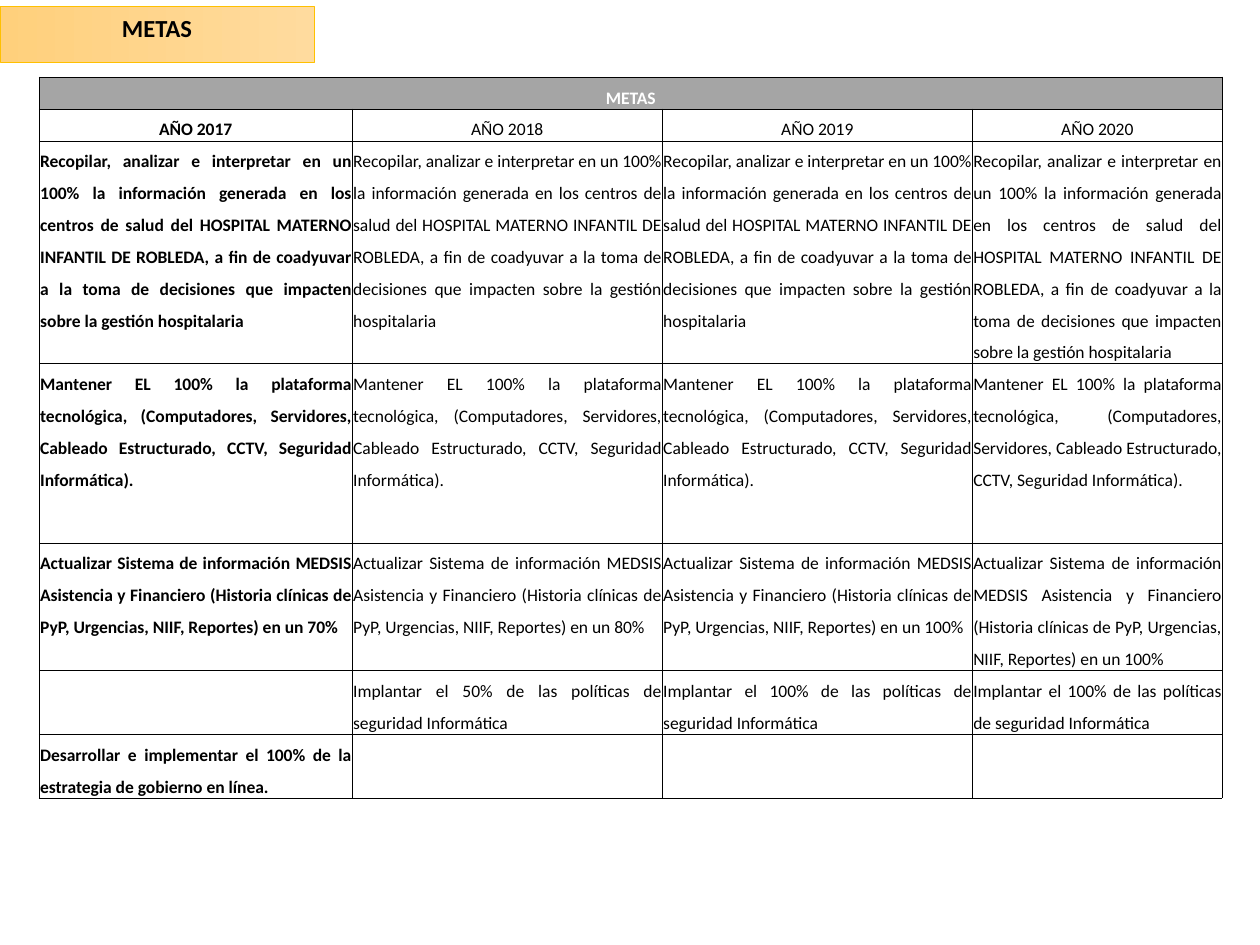
from lxml.etree import SubElement
from pptx import Presentation
from pptx.dml.color import RGBColor
from pptx.enum.text import MSO_ANCHOR, MSO_AUTO_SIZE, PP_ALIGN
from pptx.oxml.ns import qn
from pptx.util import Cm, Pt

BLACK = RGBColor(0x00, 0x00, 0x00)
WHITE = RGBColor(0xFF, 0xFF, 0xFF)
GRAY = RGBColor(0xA5, 0xA5, 0xA5)
GOLD = RGBColor(0xFF, 0xC0, 0x00)
AMBER = RGBColor(0xFF, 0xD0, 0x7C)
PALE_AMBER = RGBColor(0xFF, 0xDB, 0x9E)
FONT = "Calibri"

HEADING = "METAS"
YEARS = ["AÑO 2017", "AÑO 2018", "AÑO 2019", "AÑO 2020"]
ANALYSIS = (
    "Recopilar, analizar e interpretar en un 100% la información generada en los "
    "centros de salud del HOSPITAL MATERNO INFANTIL DE ROBLEDA, a fin de coadyuvar "
    "a la toma de decisiones que impacten sobre la gestión hospitalaria"
)
PLATFORM = (
    "Mantener EL 100% la plataforma tecnológica, (Computadores, Servidores, "
    "Cableado Estructurado, CCTV, Seguridad Informática)."
)
SYSTEM = (
    "Actualizar Sistema de información MEDSIS Asistencia y Financiero "
    "(Historia clínicas de PyP, Urgencias, NIIF, Reportes) en un {}%"
)
SECURITY = "Implantar el {}% de las políticas de seguridad Informática"
GOVERNMENT = "Desarrollar e implementar el 100% de la estrategia de gobierno en línea."

GOALS = [
    [HEADING, "", "", ""],
    YEARS,
    [ANALYSIS] * 4,
    [PLATFORM] * 4,
    [SYSTEM.format(share) for share in (70, 80, 100, 100)],
    [""] + [SECURITY.format(share) for share in (50, 100, 100)],
    [GOVERNMENT, "", "", ""],
]
COLUMN_WIDTHS = [6.31, 6.25, 6.25, 5.04]
ROW_HEIGHTS = [0.64, 0.64, 4.48, 3.61, 2.56, 1.29, 1.29]


def format_runs(paragraph, size, color, bold):
    for run in paragraph.runs:
        run.font.name = FONT
        run.font.size = Pt(size)
        run.font.bold = bold
        run.font.color.rgb = color


def add_borders(cell):
    properties = cell._tc.get_or_add_tcPr()
    for position, side in enumerate(("lnL", "lnR", "lnT", "lnB")):
        border = SubElement(properties, qn(f"a:{side}"), w=str(Pt(0.25)))
        fill = SubElement(border, qn("a:solidFill"))
        SubElement(fill, qn("a:srgbClr"), val=str(BLACK))
        properties.insert(position, border)


def add_heading(slide):
    heading = slide.shapes.title
    heading.left, heading.top = Cm(0), Cm(0.13)
    heading.width, heading.height = Cm(6.33), Cm(1.12)
    heading.fill.gradient()
    heading.fill.gradient_angle = 0
    for stop, color in zip(heading.fill.gradient_stops, (AMBER, PALE_AMBER)):
        stop.color.rgb = color
    heading.line.color.rgb = GOLD
    heading.line.width = Pt(0.5)
    frame = heading.text_frame
    frame.text = HEADING
    frame.auto_size = MSO_AUTO_SIZE.NONE
    frame.vertical_anchor = MSO_ANCHOR.TOP
    frame.paragraphs[0].alignment = PP_ALIGN.CENTER
    format_runs(frame.paragraphs[0], 14, BLACK, True)


def add_goals(slide):
    goals = slide.shapes.add_table(
        len(GOALS), len(YEARS), Cm(0.79), Cm(1.55),
        Cm(sum(COLUMN_WIDTHS)), Cm(sum(ROW_HEIGHTS)),
    ).table
    goals.first_row = goals.horz_banding = False
    for column, width in zip(goals.columns, COLUMN_WIDTHS):
        column.width = Cm(width)
    for row, height in zip(goals.rows, ROW_HEIGHTS):
        row.height = Cm(height)
    goals.cell(0, 0).merge(goals.cell(0, len(YEARS) - 1))

    for r, texts in enumerate(GOALS):
        for c, text in enumerate(texts):
            cell = goals.cell(r, c)
            cell.margin_left = cell.margin_right = Cm(0.02)
            cell.margin_top = cell.margin_bottom = 0
            if r == 0:
                cell.fill.solid()
                cell.fill.fore_color.rgb = GRAY
            else:
                cell.fill.background()
            add_borders(cell)
            if text:
                cell.text_frame.text = text
                paragraph = cell.text_frame.paragraphs[0]
                paragraph.alignment = PP_ALIGN.CENTER if r < 2 else PP_ALIGN.JUSTIFY
                paragraph.line_spacing = 1.5
                format_runs(paragraph, 10, WHITE if r == 0 else BLACK, c == 0)


def main():
    presentation = Presentation()
    presentation.slide_width, presentation.slide_height = Cm(25.4), Cm(19.05)
    slide = presentation.slides.add_slide(presentation.slide_layouts[5])
    add_heading(slide)
    add_goals(slide)
    presentation.save("out.pptx")


if __name__ == "__main__":
    main()
